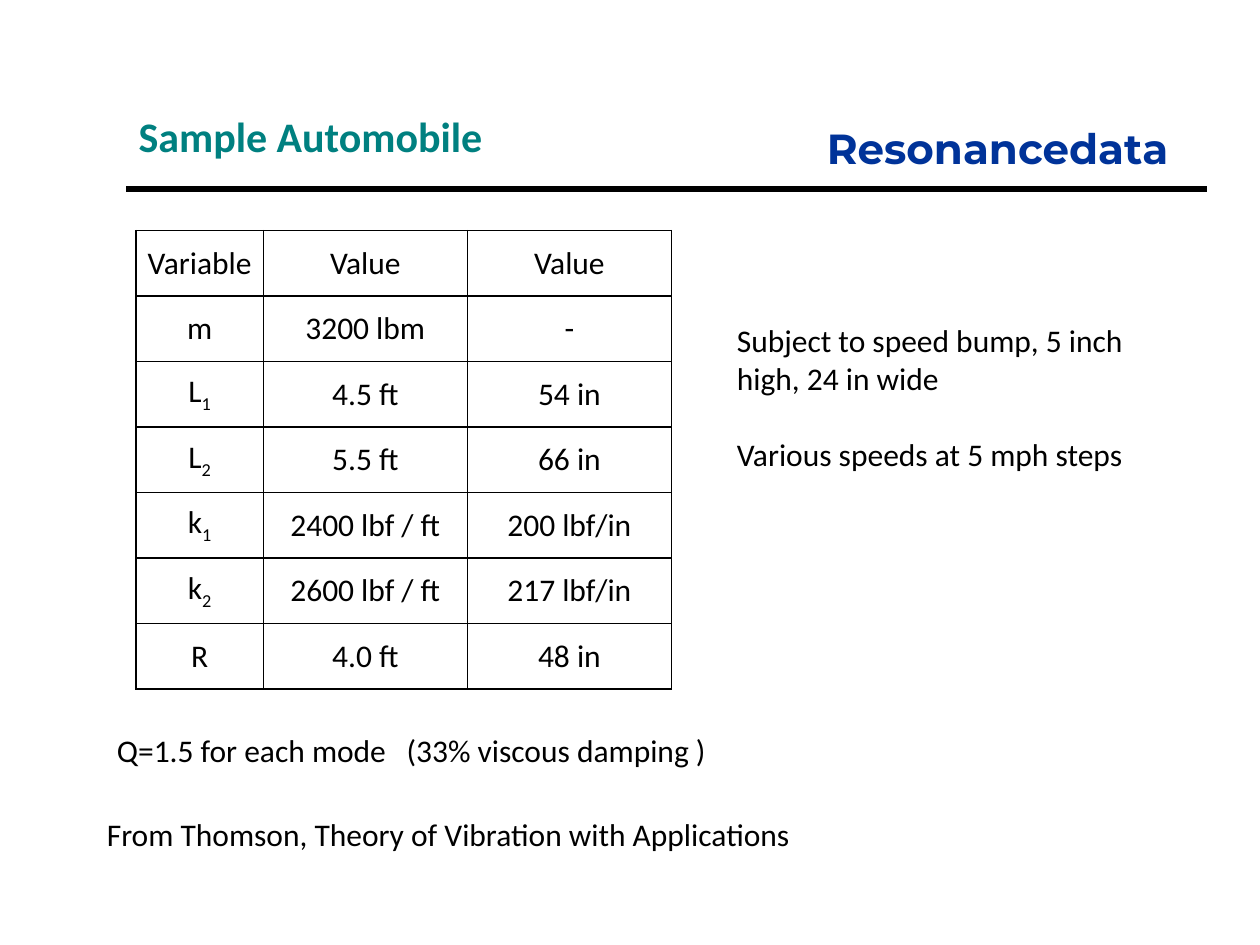
from dataclasses import dataclass

from lxml.etree import SubElement as Sub
from pptx import Presentation
from pptx.dml.color import RGBColor as Rgb
from pptx.enum.shapes import MSO_CONNECTOR as Conn
from pptx.enum.text import MSO_ANCHOR as Anchor, PP_ALIGN as Align
from pptx.oxml.ns import qn
from pptx.util import Inches, Pt


@dataclass(frozen=True)
class Theme:
    ink: str = "000000"
    teal: str = "008080"
    navy: str = "003399"
    sans: str = "Calibri"
    mark: str = "Montserrat"
    head: int = 24
    body: int = 18
    gap: int = 22
    rule: int = 3
    grid: int = 1


@dataclass(frozen=True)
class Note:
    left: float
    top: float
    width: float
    height: float
    text: str
    tab: float = 0


@dataclass(frozen=True)
class Row:
    name: str
    feet: str
    inch: str


THEME = Theme()
WIDTHS = (1.01, 1.62, 1.62)
PITCH = 0.52
ROWS = (
    Row("Variable", "Value", "Value"),
    Row("m", "3200 lbm", "-"),
    Row("L_1", "4.5 ft", "54 in"),
    Row("L_2", "5.5 ft", "66 in"),
    Row("k_1", "2400 lbf / ft", "200 lbf/in"),
    Row("k_2", "2600 lbf / ft", "217 lbf/in"),
    Row("R", "4.0 ft", "48 in"),
)
BRAND = Note(2.75, 0.92, 6.62, 0.9, "Resonancedata")
NOTES = (
    Note(0.75, 6.42, 6.17, 0.4, "From Thomson, Theory of Vibration with Applications"),
    Note(0.83, 5.75, 6.17, 0.4, "Q=1.5 for each mode\t(33% viscous damping )", 2.3),
    Note(5.75, 2.5, 3.42, 1.31,
         "Subject to speed bump, 5 inch high, 24 in wide\nVarious speeds at 5 mph steps"),
)


def style(frame, size: int, color: str, face: str, bold: bool = False,
          align=Align.LEFT) -> None:
    """Format every run and paragraph of a text frame."""
    for para in frame.paragraphs:
        para.alignment = align
        for run in para.runs:
            font = run.font
            font.size, font.name, font.bold = Pt(size), face, bold
            font.color.rgb = Rgb.from_string(color)


def add_title(slide) -> None:
    """Place and format the title."""
    title = slide.shapes.title
    title.left, title.top = Inches(1), Inches(0.83)
    title.width, title.height = Inches(4.83), Inches(0.5)
    frame = title.text_frame
    frame.text = "Sample Automobile"
    frame.vertical_anchor = Anchor.TOP
    style(frame, THEME.head, THEME.teal, THEME.sans, True)


def add_text(slide, note: Note):
    """Add a wrapped text box and return its frame."""
    box = slide.shapes.add_textbox(Inches(note.left), Inches(note.top),
                                   Inches(note.width), Inches(note.height))
    frame = box.text_frame
    frame.word_wrap = True
    frame.text = note.text
    return frame


def add_note(slide, note: Note) -> None:
    """Add body text with spaced paragraphs and an optional tab stop."""
    frame = add_text(slide, note)
    style(frame, THEME.body, THEME.ink, THEME.sans)
    for para in frame.paragraphs[1:]:
        para.space_before = Pt(THEME.gap)
    if note.tab:
        stops = Sub(frame.paragraphs[0]._p.get_or_add_pPr(), qn("a:tabLst"))
        Sub(stops, qn("a:tab"), pos=str(Inches(note.tab)), algn="l")


def add_rule(slide) -> None:
    """Draw the line below the heading."""
    line = slide.shapes.add_connector(Conn.STRAIGHT, Inches(1), Inches(1.5),
                                      Inches(9.58), Inches(1.5))
    line.line.color.rgb = Rgb.from_string(THEME.ink)
    line.line.width = Pt(THEME.rule)
    Sub(line._element.spPr, qn("a:effectLst"))


def fill_cell(cell, text: str) -> None:
    """Write a centred, bordered cell; an underscore starts a subscript."""
    base, _, low = text.partition("_")
    cell.margin_left = cell.margin_right = Inches(0.07)
    cell.margin_top = cell.margin_bottom = 0
    cell.vertical_anchor = Anchor.MIDDLE
    frame = cell.text_frame
    frame.text = base
    if low:
        run = frame.paragraphs[0].add_run()
        run.text = low
        run._r.get_or_add_rPr().set("baseline", "-25000")
    style(frame, THEME.body, THEME.ink, THEME.sans, align=Align.CENTER)
    props = cell._tc.get_or_add_tcPr()
    for side in "LRTB":
        edge = Sub(props, qn(f"a:ln{side}"), w=str(Pt(THEME.grid)))
        Sub(Sub(edge, qn("a:solidFill")), qn("a:srgbClr"), val=THEME.ink)
    cell.fill.background()


def add_grid(slide) -> None:
    """Add the table of car values."""
    table = slide.shapes.add_table(
        len(ROWS), len(WIDTHS), Inches(1.08), Inches(1.83),
        Inches(sum(WIDTHS)), Inches(PITCH * len(ROWS))).table
    table.first_row = table.horz_banding = False
    for col, width in zip(table.columns, WIDTHS):
        col.width = Inches(width)
    for line, row in zip(table.rows, ROWS):
        line.height = Inches(PITCH)
        for cell, text in zip(line.cells, (row.name, row.feet, row.inch)):
            fill_cell(cell, text)


def main() -> None:
    """Build and save the slide."""
    deck = Presentation()
    deck.slide_width, deck.slide_height = Inches(10), Inches(7.5)
    slide = deck.slides.add_slide(deck.slide_layouts[5])
    add_title(slide)
    style(add_text(slide, BRAND), THEME.head, THEME.navy, THEME.mark, True, Align.RIGHT)
    add_rule(slide)
    add_grid(slide)
    for note in NOTES:
        add_note(slide, note)
    deck.save("out.pptx")


if __name__ == "__main__":
    main()
